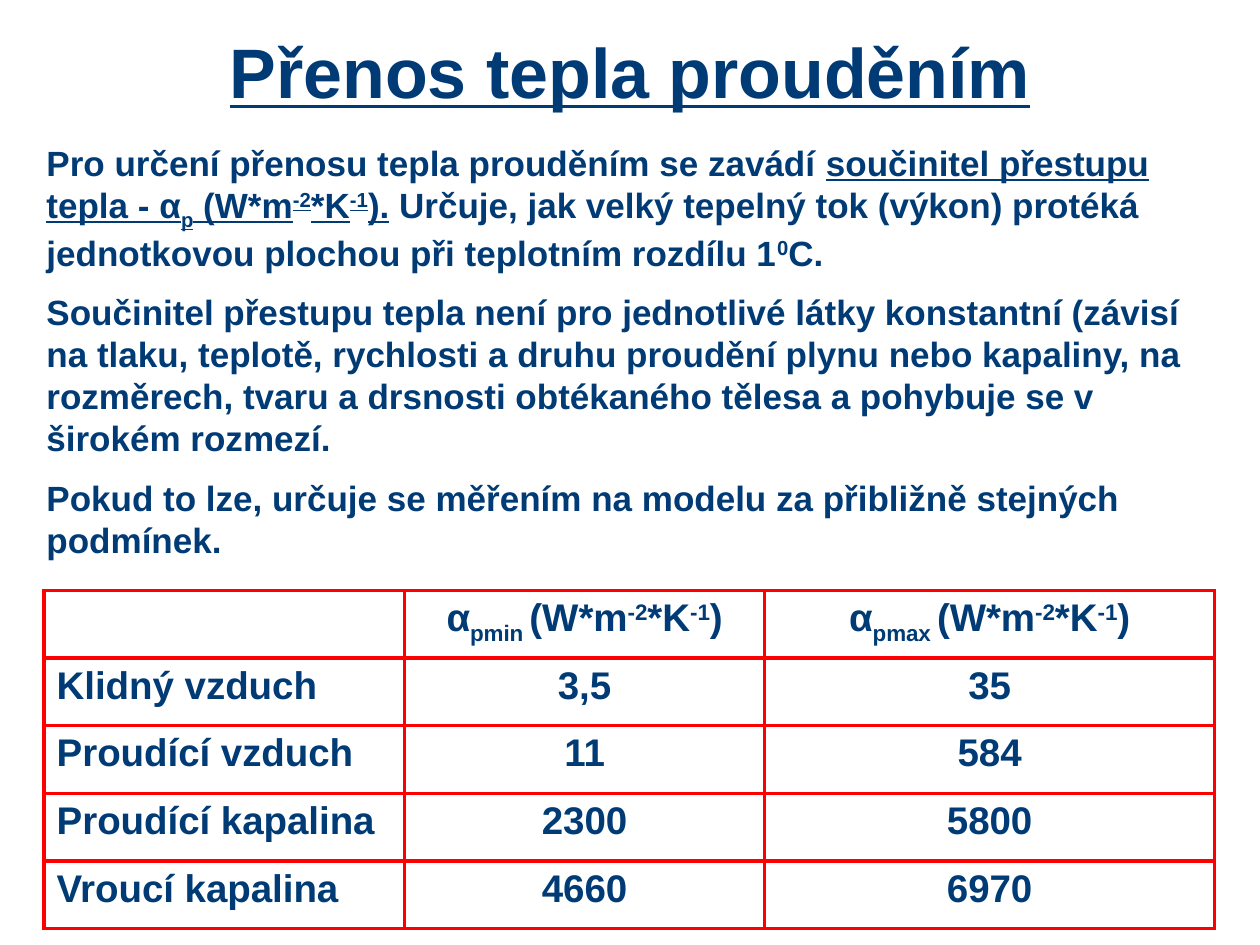
from lxml import etree
from pptx import Presentation
from pptx.dml.color import RGBColor
from pptx.enum.text import MSO_ANCHOR, PP_ALIGN
from pptx.oxml.ns import qn
from pptx.util import Inches, Pt

LEFT, CENTER = PP_ALIGN.LEFT, PP_ALIGN.CENTER
TOP, MIDDLE = MSO_ANCHOR.TOP, MSO_ANCHOR.MIDDLE
SLIDE_WIDTH, SLIDE_HEIGHT = Inches(10), Inches(7.5)
NAVY, RED = "003B76", "FF0000"
BORDER_WIDTH = Pt(2.25)
BORDER_SIDES = ("a:lnL", "a:lnR", "a:lnT", "a:lnB")
SUBSCRIPT, SUPERSCRIPT = -25, 30

UNDERLINED = {"underline": True}
TITLE = [[("Přenos tepla prouděním", 0, UNDERLINED)]]
UNIT = [("(W*m", 0), ("-2", SUPERSCRIPT), ("*K", 0), ("-1", SUPERSCRIPT)]
BODY = [
    [
        ("Pro určení přenosu tepla prouděním se zavádí ", 0),
        ("součinitel přestupu tepla - α", 0, UNDERLINED),
        ("p", SUBSCRIPT, UNDERLINED),
        (" ", 0, UNDERLINED),
        *[(*part, UNDERLINED) for part in UNIT],
        (").", 0, UNDERLINED),
        (" Určuje, jak velký tepelný tok (výkon) protéká jednotkovou plochou "
         "při teplotním rozdílu 1", 0),
        ("0", SUPERSCRIPT),
        ("C.", 0),
    ],
    [("Součinitel přestupu tepla není pro jednotlivé látky konstantní (závisí "
      "na tlaku, teplotě, rychlosti a druhu proudění plynu nebo kapaliny, na "
      "rozměrech, tvaru a drsnosti obtékaného tělesa a pohybuje se v širokém "
      "rozmezí.", 0)],
    [("Pokud to lze, určuje se měřením na modelu za přibližně stejných "
      "podmínek.", 0)],
]
COLUMN_SHARES = (0.286, 0.286, 0.357)
ROW_SHARE = 0.0715
COEFFICIENTS = [
    ("Klidný vzduch", "3,5", "35"),
    ("Proudící vzduch", "11", "584"),
    ("Proudící kapalina", "2300", "5800"),
    ("Vroucí kapalina", "4660", "6970"),
]


def color(value):
    return RGBColor.from_string(value)


def apply_format(target, values):
    for name, value in values.items():
        setattr(target, name, value)


def place(left, top, width, height):
    return (int(left * SLIDE_WIDTH), int(top * SLIDE_HEIGHT),
            int(width * SLIDE_WIDTH), int(height * SLIDE_HEIGHT))


def add_run(paragraph, size, text, baseline=0, extra=None):
    run = paragraph.add_run()
    run.text = text
    values = {"name": "Arial", "size": Pt(size), "bold": True}
    apply_format(run.font, {**values, **(extra or {})})
    run.font.color.rgb = color(NAVY)
    if baseline:
        run._r.get_or_add_rPr().set("baseline", str(baseline * 1000))


def write_paragraphs(frame, paragraphs, size, alignment, space=0):
    for index, runs in enumerate(paragraphs):
        paragraph = frame.add_paragraph() if index else frame.paragraphs[0]
        apply_format(paragraph, {"alignment": alignment, "space_before": Pt(space)})
        for run in runs:
            add_run(paragraph, size, *run)


def add_text(slide, box, paragraphs, size, alignment, anchor, space=0):
    frame = slide.shapes.add_textbox(*place(*box)).text_frame
    apply_format(frame, {"word_wrap": True, "vertical_anchor": anchor})
    write_paragraphs(frame, paragraphs, size, alignment, space)


def outline_cell(cell):
    cell.fill.background()
    properties = cell._tc.get_or_add_tcPr()
    for index, side in enumerate(BORDER_SIDES):
        line = etree.Element(qn(side), w=str(BORDER_WIDTH))
        fill = etree.SubElement(line, qn("a:solidFill"))
        etree.SubElement(fill, qn("a:srgbClr"), val=RED)
        properties.insert(index, line)


def heading(subscript):
    return [("α", 0), (subscript, SUBSCRIPT), *UNIT, (")", 0)]


def add_coefficient_table(slide, left, top):
    rows = [[[], heading("pmin "), heading("pmax ")]]
    rows += [[[(text, 0)] for text in row] for row in COEFFICIENTS]
    box = place(left, top, sum(COLUMN_SHARES), ROW_SHARE * len(rows))
    table = slide.shapes.add_table(len(rows), len(COLUMN_SHARES), *box).table
    apply_format(table, {"first_row": False, "horz_banding": False})
    for column, share in zip(table.columns, COLUMN_SHARES):
        column.width = int(share * SLIDE_WIDTH)
    for row_index, row in enumerate(rows):
        for column_index, runs in enumerate(row):
            cell = table.cell(row_index, column_index)
            outline_cell(cell)
            alignment = CENTER if column_index else LEFT
            write_paragraphs(cell.text_frame, [runs], 22, alignment)


def main():
    presentation = Presentation()
    apply_format(presentation, {"slide_width": SLIDE_WIDTH,
                                "slide_height": SLIDE_HEIGHT})
    slide = presentation.slides.add_slide(presentation.slide_layouts[6])
    add_text(slide, (0.05, 0.017, 0.9, 0.116), TITLE, 40, CENTER, MIDDLE)
    add_text(slide, (0.027, 0.143, 0.945, 0.461), BODY, 20, LEFT, TOP, 10)
    add_coefficient_table(slide, 0.035, 0.625)
    presentation.save("out.pptx")


if __name__ == "__main__":
    main()
